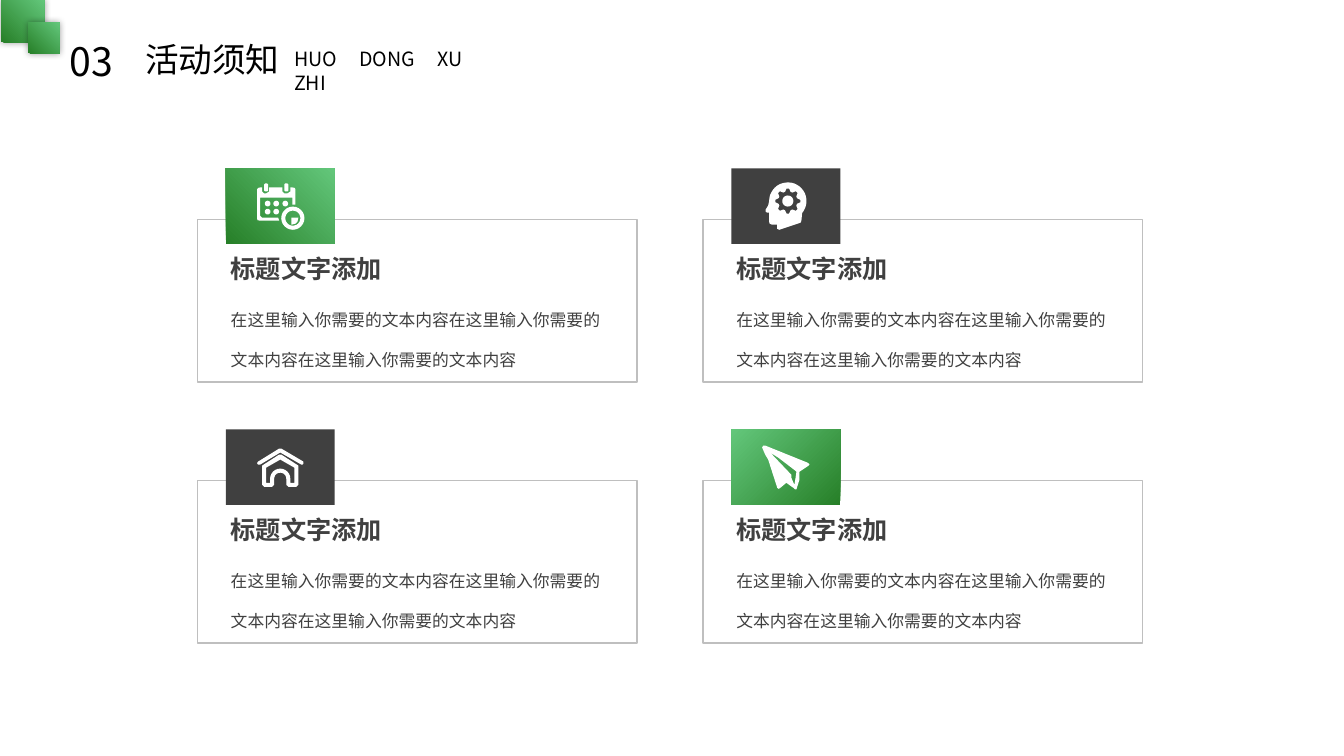
from dataclasses import dataclass
from math import cos, radians, sin

from lxml import etree
from pptx import Presentation
from pptx.dml.color import RGBColor
from pptx.enum.shapes import MSO_SHAPE
from pptx.enum.text import MSO_AUTO_SIZE, PP_ALIGN
from pptx.oxml.ns import qn
from pptx.shapes.autoshape import Shape
from pptx.shapes.shapetree import GroupShapes
from pptx.util import Emu, Inches, Pt

RECTANGLE = MSO_SHAPE.RECTANGLE
ROUNDED = MSO_SHAPE.ROUNDED_RECTANGLE
JUSTIFY = PP_ALIGN.JUSTIFY
FIT_SHAPE = MSO_AUTO_SIZE.SHAPE_TO_FIT_TEXT

SLIDE_WIDTH = Inches(13.33)
SLIDE_HEIGHT = Inches(7.5)
COLUMN_STEP = 37.62
ROW_STEP = 34.53
ICON_UNIT = Inches(0.01)
ICON_DETAIL = 10
COLORS = {
    "dark_green": "277F28",
    "light_green": "63C77B",
    "charcoal": "404040",
    "border": "BFBFBF",
    "white": "FFFFFF",
    "black": "000000",
}
FONT_SC = "Noto Sans CJK SC"
FONT_JP = "Noto Sans CJK JP"
HEADING = "标题文字添加"
BODY = "在这里输入你需要的文本内容" * 3

Contour = list[tuple[float, float]]


@dataclass(frozen=True)
class Box:
    left: float
    top: float
    width: float
    height: float

    def shifted(self, column: int, row: int) -> "Box":
        return Box(self.left + column * COLUMN_STEP, self.top + row * ROW_STEP,
                   self.width, self.height)

    def lengths(self) -> tuple[Emu, Emu, Emu, Emu]:
        return (across(self.left), down(self.top),
                across(self.width), down(self.height))


@dataclass(frozen=True)
class TextStyle:
    size: int
    font: str
    color: str
    bold: bool = False
    wrap: bool = True
    justified: bool = True
    line_spacing: float = 1.0


@dataclass(frozen=True)
class Label:
    text: str
    box: Box
    style: TextStyle


@dataclass(frozen=True)
class Card:
    column: int
    row: int
    gradient_angle: int | None
    icon_left: float
    icon_top: float
    icon: list[Contour]


def across(percent: float) -> Emu:
    return Emu(round(SLIDE_WIDTH * percent / 100))


def down(percent: float) -> Emu:
    return Emu(round(SLIDE_HEIGHT * percent / 100))


def arc(x: float, y: float, radius: float, start: int = 0, end: int = 360) -> Contour:
    steps = 24
    angles = [radians(start + (end - start) * step / steps) for step in range(steps + 1)]
    return [(x + radius * cos(angle), y + radius * sin(angle)) for angle in angles]


def gear(x: float, y: float, inner: float, outer: float, teeth: int) -> Contour:
    points = []
    for step in range(teeth * 4):
        angle = radians((step - 0.5) * 90 / teeth)
        radius = outer if step % 4 < 2 else inner
        points.append((x + radius * cos(angle), y + radius * sin(angle)))
    return points


def peg(left: float) -> Contour:
    return [(left, 1), (left + 1, 0), (left + 3, 0), (left + 4, 1),
            (left + 4, 7), (left + 3, 8), (left + 1, 8), (left, 7)]


CALENDAR = [
    [(0, 6), (1, 4.5), (3, 4), (5, 4), (5, 8), (7, 10), (9, 10), (12, 8), (12, 4),
     (25, 4), (25, 8), (27, 10), (30, 10), (33, 8), (33, 4), (35, 4), (37.5, 4.5),
     (38, 6), (38, 21), (35, 21), (35, 14), (3, 14), (3, 32), (5, 34), (21, 34),
     (22, 37), (3, 37), (0.5, 36.5), (0, 35)],
    peg(7), peg(27),
    *[arc(x, y, 2.8) for x, y in ((10.5, 20), (19, 20), (28, 20), (10.5, 28), (19, 28))],
    arc(35.5, 34.5, 11.5), arc(35.5, 34.5, 7.5),
    [(34, 34), (41, 34), (40, 38), (38, 40), (34, 41)],
]
HEAD = [
    arc(22.5, 18.5, 18.5, 180, 400)
    + [(36, 38), (35, 40), (14, 47), (12, 46), (12, 42), (7, 42), (4.5, 41), (4, 39),
       (4, 30), (2, 30), (0.5, 29), (0.5, 27), (3, 23)],
    gear(22.5, 18.5, 9.5, 12.5, 8),
    arc(22.5, 18.5, 5.5),
]
HOUSE = [
    [(46, 15), (45, 16), (44, 16), (23, 4), (3, 16), (1, 16), (0, 14.5), (1, 13),
     (22, 0), (24, 0), (46, 13)],
    [(41, 17), (41, 36), (39, 38), (31, 38), (29, 36)] + arc(23, 30, 6, 0, -180)
    + [(17, 36), (15, 38), (7, 38), (5, 36), (5, 17), (22, 6), (24, 6)],
    [(37, 19), (23, 11), (9, 19), (9, 34), (13, 34)] + arc(23, 30, 10, 180, 360)
    + [(33, 34), (37, 34)],
]
PLANE = [
    [(45, 18), (3, 1), (1, 1), (0, 3), (3, 10), (6, 15), (15, 43), (16.5, 44),
     (18, 43), (24, 38), (31, 43), (32.5, 44.5), (34, 44.5), (37, 35), (37, 27),
     (46, 21), (47, 19.5)],
    [(33, 34), (32, 40), (29, 33), (29, 30), (8, 8), (16, 13), (33, 26), (34, 27)],
]

CARDS = [
    Card(0, 0, 45, 19.13, 24.27, CALENDAR),
    Card(0, 1, None, 19.13, 24.8, HOUSE),
    Card(1, 0, None, 19.31, 24.13, HEAD),
    Card(1, 1, 135, 19.09, 24.27, PLANE),
]
PANEL = Box(14.7, 29.07, 32.7, 21.47)
BADGE = Box(16.8, 22.27, 8.1, 10)
CARD_LABELS = [
    Label(HEADING, Box(16.43, 32.8, 12.9, 5.33),
          TextStyle(18, FONT_SC, "charcoal", bold=True, wrap=False)),
    Label(BODY, Box(16.43, 37.6, 30, 11.33),
          TextStyle(12, FONT_SC, "charcoal", justified=False, line_spacing=2.0)),
]
HEADER_LABELS = [
    Label("03", Box(4.43, 4.27, 6.08, 7.6), TextStyle(28, FONT_JP, "black")),
    Label("活动须知", Box(10.05, 4.53, 11.93, 6.67), TextStyle(24, FONT_JP, "black")),
    Label("HUO DONG XU ZHI", Box(21.15, 5.6, 14.03, 4.53), TextStyle(14, FONT_SC, "black")),
]
CORNERS = [Box(0.08, 0, 3.23, 5.6), Box(2.1, 2.93, 2.33, 4.13)]


def rgb(name: str) -> RGBColor:
    return RGBColor.from_string(COLORS[name])


def add_block(shapes: GroupShapes, box: Box, kind: MSO_SHAPE) -> Shape:
    shape = shapes.add_shape(kind, *box.lengths())
    shape.shadow.inherit = False
    shape.line.fill.background()
    if kind == ROUNDED:
        shape.adjustments[0] = 0
    return shape


def fill_green(shape: Shape, angle: int) -> None:
    shape.fill.gradient()
    shape.fill.gradient_angle = angle
    for stop, name in zip(shape.fill.gradient_stops, ("dark_green", "light_green")):
        stop.color.rgb = rgb(name)


def fill_solid(shape: Shape, name: str) -> None:
    shape.fill.solid()
    shape.fill.fore_color.rgb = rgb(name)


def add_glow(shape: Shape) -> None:
    effects = shape._element.spPr.find(qn("a:effectLst"))
    shadow = etree.SubElement(effects, qn("a:outerShdw"), blurRad=str(Pt(5)), dist="0", dir="0")
    color = etree.SubElement(shadow, qn("a:srgbClr"), val=COLORS["black"])
    etree.SubElement(color, qn("a:alpha"), val="40000")


def add_label(shapes: GroupShapes, label: Label, column: int = 0, row: int = 0) -> None:
    style = label.style
    frame = shapes.add_textbox(*label.box.shifted(column, row).lengths()).text_frame
    frame.word_wrap = style.wrap
    frame.auto_size = FIT_SHAPE
    paragraph = frame.paragraphs[0]
    paragraph.text = label.text
    paragraph.line_spacing = style.line_spacing
    if style.justified:
        paragraph.alignment = JUSTIFY
    font = paragraph.font
    font.size = Pt(style.size)
    font.bold = style.bold
    font.color.rgb = rgb(style.color)
    font.name = style.font
    properties = paragraph._p.pPr.find(qn("a:defRPr"))
    etree.SubElement(properties, qn("a:ea"), typeface=style.font)


def add_icon(shapes: GroupShapes, card: Card) -> None:
    outlines = [[(x * ICON_DETAIL, y * ICON_DETAIL) for x, y in contour]
                for contour in card.icon]
    builder = shapes.build_freeform(*outlines[0][0], scale=ICON_UNIT / ICON_DETAIL)
    for index, outline in enumerate(outlines):
        if index:
            builder.move_to(*outline[0])
        builder.add_line_segments(outline[1:], close=True)
    place = Box(card.icon_left, card.icon_top, 0, 0).shifted(card.column, card.row)
    icon = builder.convert_to_shape(across(place.left), down(place.top))
    icon.shadow.inherit = False
    icon.line.fill.background()
    fill_solid(icon, "white")


def add_card(shapes: GroupShapes, card: Card) -> None:
    panel = add_block(shapes, PANEL.shifted(card.column, card.row), ROUNDED)
    panel.fill.background()
    panel.line.color.rgb = rgb("border")
    panel.line.width = Pt(1)
    badge = add_block(shapes, BADGE.shifted(card.column, card.row), ROUNDED)
    if card.gradient_angle is None:
        fill_solid(badge, "charcoal")
    else:
        fill_green(badge, card.gradient_angle)
    add_icon(shapes, card)
    for label in CARD_LABELS:
        add_label(shapes, label, card.column, card.row)


def add_header(shapes: GroupShapes) -> None:
    for label in HEADER_LABELS:
        add_label(shapes, label)
    for box in CORNERS:
        corner = add_block(shapes, box, RECTANGLE)
        fill_green(corner, 45)
        add_glow(corner)


def main() -> None:
    presentation = Presentation()
    presentation.slide_width = SLIDE_WIDTH
    presentation.slide_height = SLIDE_HEIGHT
    slide = presentation.slides.add_slide(presentation.slide_layouts[6])
    for card in CARDS:
        add_card(slide.shapes.add_group_shape().shapes, card)
    add_header(slide.shapes.add_group_shape().shapes)
    presentation.save("out.pptx")


if __name__ == "__main__":
    main()
